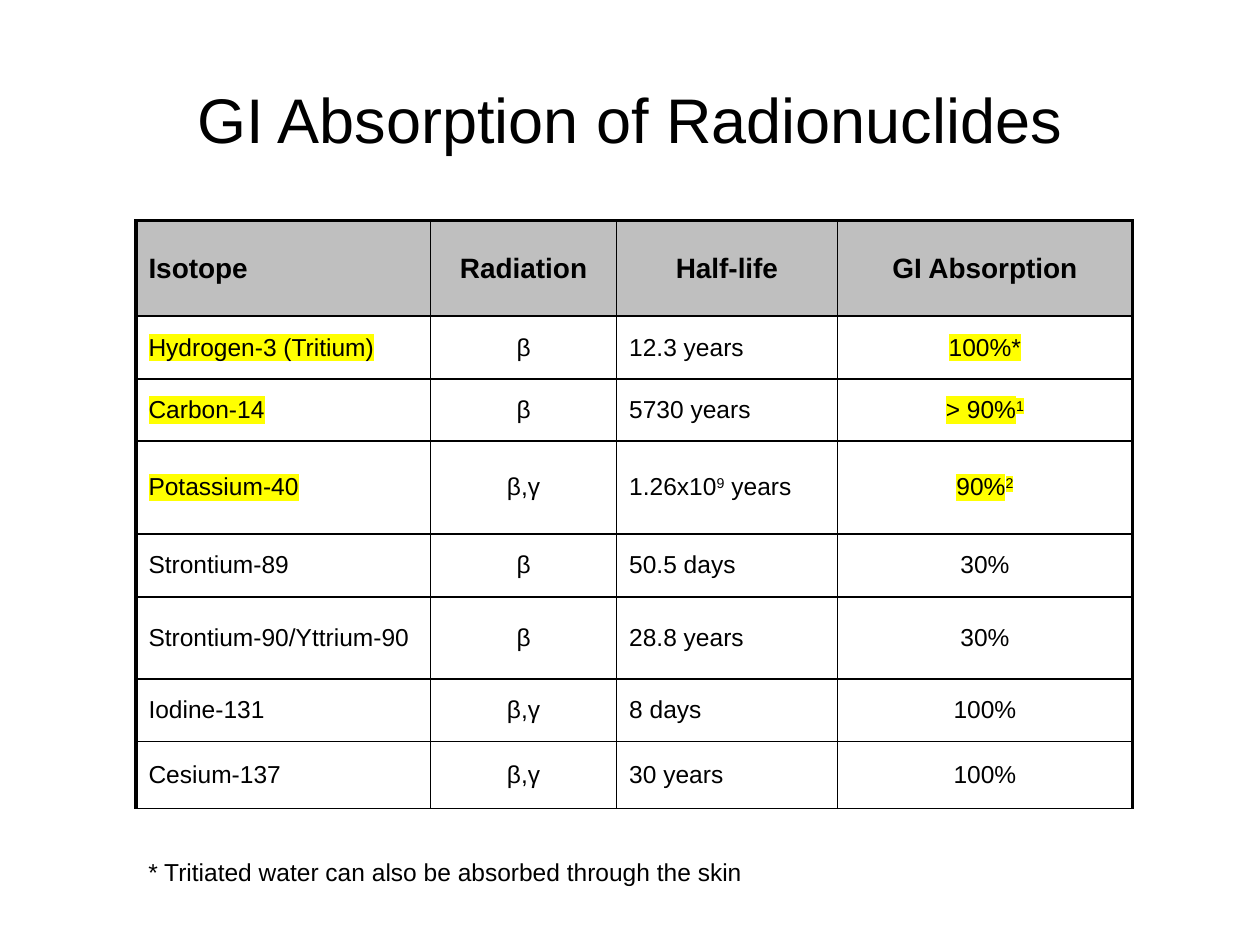
from typing import NamedTuple

from lxml import etree
from pptx import Presentation, util as u
from pptx.dml.color import RGBColor
from pptx.enum import text
from pptx.oxml import ns

COLORS = {"ink": "000000", "header": "BFBFBF", "mark": "FFFF00"}
FONT = "Arial"
LEFT, CENTER = text.PP_ALIGN.LEFT, text.PP_ALIGN.CENTER
THIN, THICK = 1, 2.25


class Column(NamedTuple):
    title: str
    width: float
    align: text.PP_ALIGN
    title_align: text.PP_ALIGN
    markable: bool


class Isotope(NamedTuple):
    name: str
    radiation: str
    half_life: str
    absorption: str
    height: float
    marked: bool = False


class Caption(NamedTuple):
    words: str
    left: float
    top: float
    width: float
    height: float
    size: float
    align: text.PP_ALIGN


COLUMNS = [
    Column("Isotope", 5.94, LEFT, LEFT, True),
    Column("Radiation", 3.75, CENTER, CENTER, False),
    Column("Half-life", 4.45, LEFT, CENTER, False),
    Column("GI Absorption", 5.95, CENTER, CENTER, True),
]
HEADER_HEIGHT = 1.92
ISOTOPES = [
    Isotope("Hydrogen-3 (Tritium)", "β", "12.3 years", "100%*", 1.27, True),
    Isotope("Carbon-14", "β", "5730 years", "> 90%^1", 1.25, True),
    Isotope("Potassium-40", "β,γ", "1.26x10^9^ years", "90%^2", 1.87, True),
    Isotope("Strontium-89", "β", "50.5 days", "30%", 1.27),
    Isotope("Strontium-90/Yttrium-90", "β", "28.8 years", "30%", 1.66),
    Isotope("Iodine-131", "β,γ", "8 days", "100%", 1.26),
    Isotope("Cesium-137", "β,γ", "30 years", "100%", 1.35),
]
CAPTIONS = [
    Caption("GI Absorption of Radionuclides", 2.54, 1.5, 20.32, 1.78, 36, CENTER),
    Caption("* Tritiated water can also be absorbed through the skin",
            2.74, 17.15, 12.7, 0.84, 14, LEFT),
]


def add_color(parent: etree.ElementBase, tag: str, color: str) -> etree.ElementBase:
    """Append an element that holds one RGB colour."""
    el = etree.SubElement(parent, ns.qn(tag))
    etree.SubElement(el, ns.qn("a:srgbClr"), val=COLORS[color])
    return el


def write(tf, words: str, size: float, align: text.PP_ALIGN,
          bold: bool = False, marked: bool = False) -> None:
    """Write one paragraph in which carets switch superscript on and off."""
    p = tf.paragraphs[0]
    p.alignment = align
    p.font.name, p.font.size, p.font.bold = FONT, u.Pt(size), bold
    p.font.color.rgb = RGBColor.from_string(COLORS["ink"])
    for i, part in enumerate(words.split("^")):
        if part:
            r = p.add_run()
            r.text = part
            rpr = r.font._element
            if i % 2:
                rpr.set("baseline", "30000")
            if marked:
                add_color(rpr, "a:highlight", "mark")


def set_borders(cell, left: float, right: float, top: float, bottom: float) -> None:
    """Draw the four borders of a cell, with widths in points."""
    tcpr = cell._tc.get_or_add_tcPr()
    sides = {"a:lnL": left, "a:lnR": right, "a:lnT": top, "a:lnB": bottom}
    for i, (tag, width) in enumerate(sides.items()):
        ln = etree.Element(ns.qn(tag), w=str(u.Pt(width)))
        add_color(ln, "a:solidFill", "ink")
        tcpr.insert(i, ln)


def add_caption(s, caption: Caption) -> None:
    """Add a wrapped text box."""
    box = (caption.left, caption.top, caption.width, caption.height)
    tf = s.shapes.add_textbox(*map(u.Cm, box)).text_frame
    tf.word_wrap = True
    write(tf, caption.words, caption.size, caption.align)


def add_isotope_table(s, left: float, top: float) -> None:
    """Add the table with one header row and one row per isotope."""
    heights = [HEADER_HEIGHT] + [isotope.height for isotope in ISOTOPES]
    widths = [column.width for column in COLUMNS]
    table = s.shapes.add_table(len(heights), len(widths), u.Cm(left), u.Cm(top),
                               u.Cm(sum(widths)), u.Cm(sum(heights))).table
    table.first_row = table.horz_banding = False
    for row, height in zip(table.rows, heights):
        row.height = u.Cm(height)
    for c, column in enumerate(COLUMNS):
        table.columns[c].width = u.Cm(column.width)
        for r in range(len(heights)):
            cell = table.cell(r, c)
            cell.vertical_anchor = text.MSO_ANCHOR.MIDDLE
            if r == 0:
                cell.fill.solid()
                cell.fill.fore_color.rgb = RGBColor.from_string(COLORS["header"])
                write(cell.text_frame, column.title, 16, column.title_align, bold=True)
            else:
                isotope = ISOTOPES[r - 1]
                cell.fill.background()
                write(cell.text_frame, isotope[c], 14, column.align,
                      marked=isotope.marked and column.markable)
            set_borders(cell, THICK if c == 0 else THIN,
                        THICK if c == len(COLUMNS) - 1 else THIN,
                        THICK if r == 0 else THIN, THIN)


def main() -> None:
    """Build the slide and save it."""
    prs = Presentation()
    prs.slide_width, prs.slide_height = u.Cm(25.4), u.Cm(19.05)
    s = prs.slides.add_slide(prs.slide_layouts[6])
    add_isotope_table(s, 2.74, 4.45)
    for caption in CAPTIONS:
        add_caption(s, caption)
    prs.save("out.pptx")


if __name__ == "__main__":
    main()
